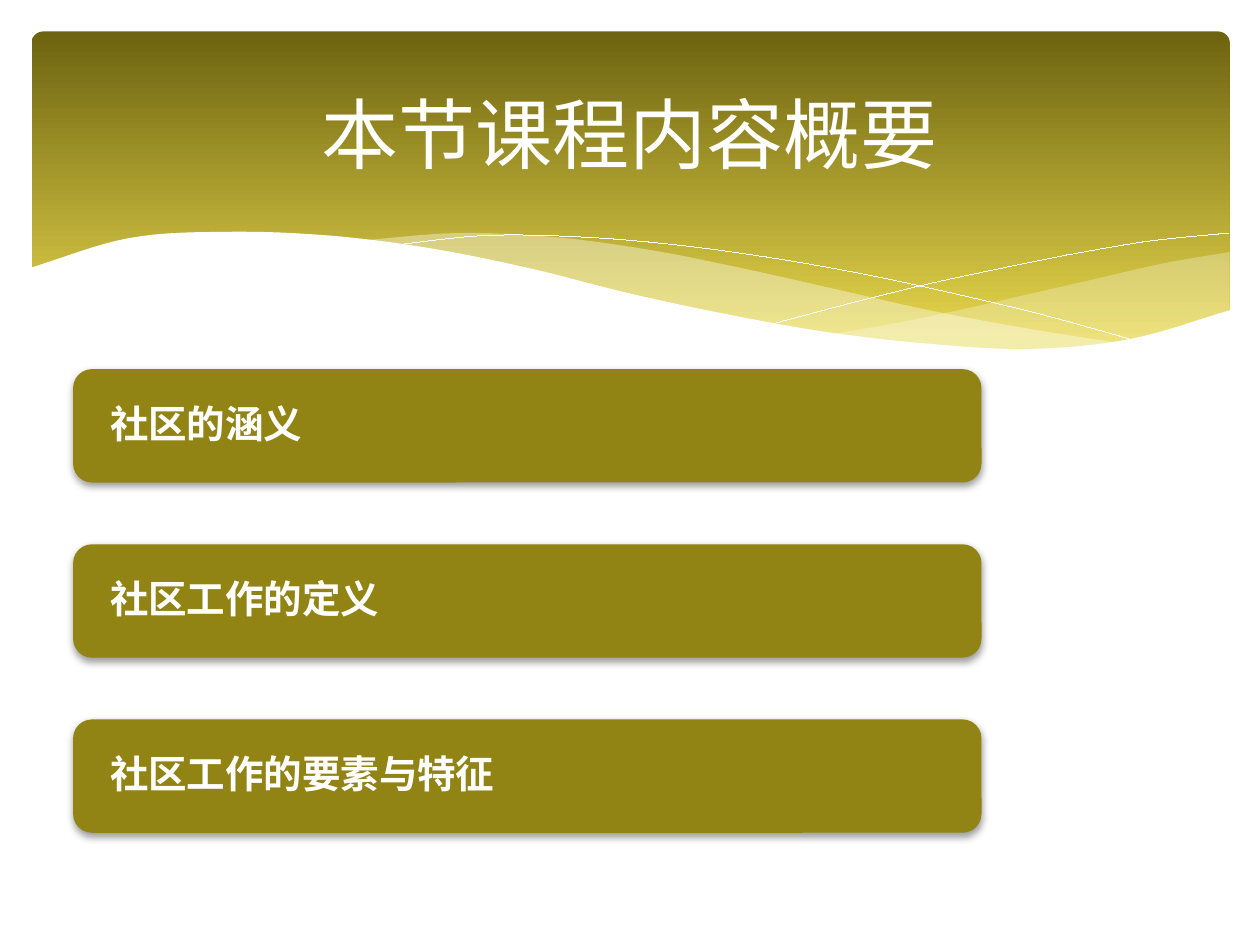
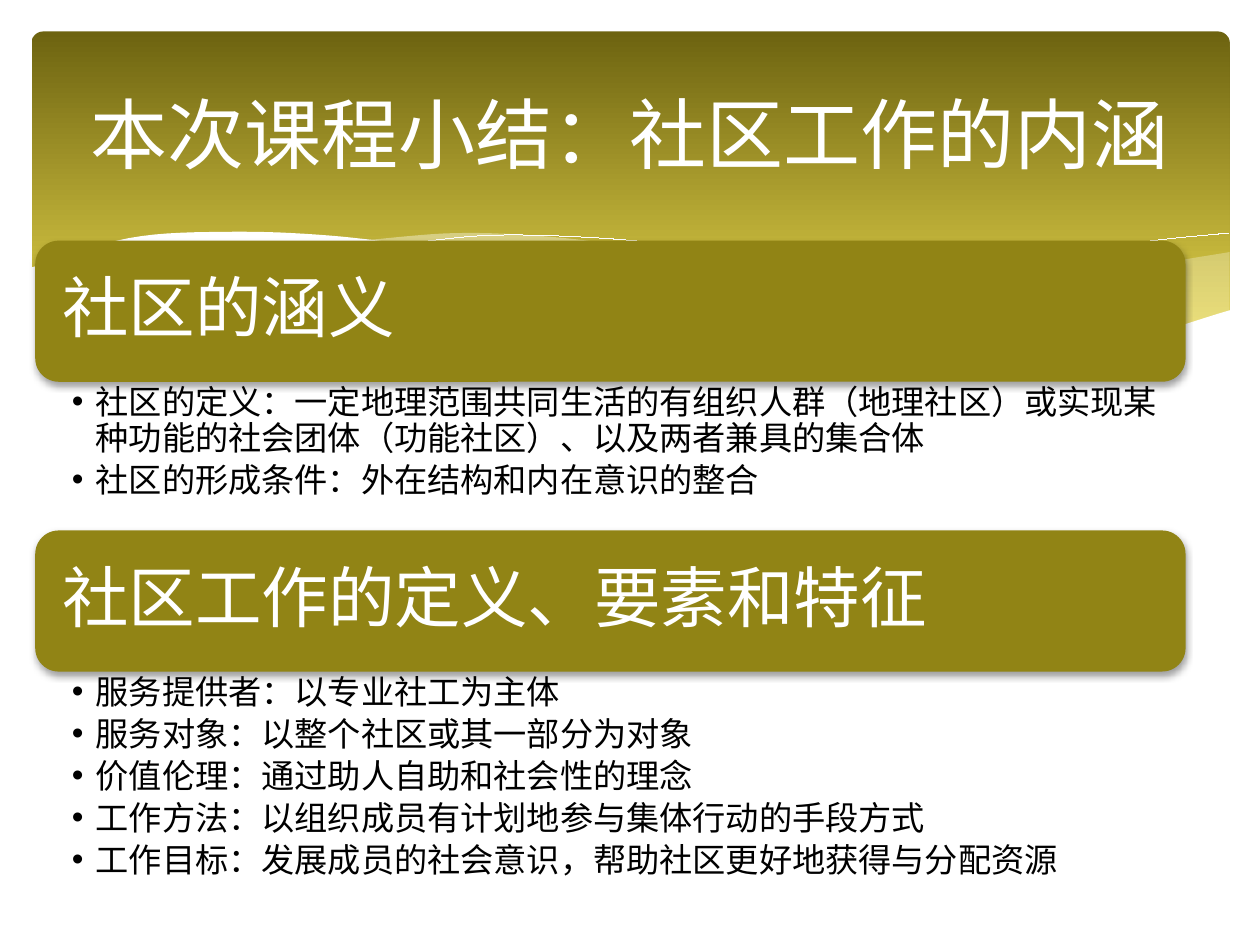
from lxml.etree import SubElement
from pptx import Presentation
from pptx.dml.color import RGBColor
from pptx.enum.shapes import MSO_SHAPE as Shape
from pptx.enum.text import MSO_ANCHOR as Anchor, PP_ALIGN as Align
from pptx.oxml.ns import qn
from pptx.util import Inches, Pt

FONT = "Calibri"
WHITE = RGBColor(0xFF, 0xFF, 0xFF)
BLACK = RGBColor(0, 0, 0)
CREAM = RGBColor(0xFF, 0xFF, 0xF4)
OLIVE = RGBColor(0x91, 0x84, 0x15)
DARK = RGBColor(0x6D, 0x63, 0x10)
GOLD = RGBColor(0xE5, 0xD5, 0x4B)

OUTLINE = "本节课程内容概要"
TOPICS = ["社区的涵义", "社区工作的定义", "社区工作的要素与特征"]

SUMMARY = "本次课程小结：社区工作的内涵"
PARTS = [
    ("社区的涵义", 1.18, [
        "社区的定义：一定地理范围共同生活的有组织人群（地理社区）或实现某种功能的社会团体（功能社区）、以及两者兼具的集合体",
        "社区的形成条件：外在结构和内在意识的整合",
    ]),
    ("社区工作的定义、要素和特征", 2.11, [
        "服务提供者：以专业社工为主体",
        "服务对象：以整个社区或其一部分为对象",
        "价值伦理：通过助人自助和社会性的理念",
        "工作方法：以组织成员有计划地参与集体行动的手段方式",
        "工作目标：发展成员的社会意识，帮助社区更好地获得与分配资源",
    ]),
]

TITLE_BOX = (0.5, 0.37, 9, 1.37)
BAND_BOX = (0.25, 0.25, 9.51, 2.7)
TOPIC_BOX = (0.58, 2.93, 7.21, 0.9)
TOPIC_STEP = 1.39
HEAD_BOX = (0.28, 1.91, 9.13, 1.12)
INDENT = 0.19
STEPS = 8

# Each wave: first x, last x, heights at equal steps between them.
RIGHT = (6.61, 9.76, [2.65, 2.56, 2.45, 2.33, 2.21, 2.09, 2])
MIDDLE = (2.86, 8.93, [1.91, 1.85, 1.88, 1.98, 2.13, 2.3, 2.47, 2.61, 2.73])
FALL = (3.09, 9.07, [1.95, 1.87, 1.88, 1.94, 2.04, 2.17, 2.33, 2.51, 2.72])
RISE = (6.13, 9.75, [2.57, 2.41, 2.26, 2.13, 2.01, 1.91, 1.85])
FRONT = (0.23, 9.77, [2.13, 1.89, 1.84, 1.87, 1.97, 2.13, 2.33,
                      2.5, 2.64, 2.73, 2.77, 2.69, 2.46])

# Each fill: wave, floor it closes down to, colour, opacity in percent.
FILLS = [(RIGHT, 2.78, CREAM, 29), (MIDDLE, 2.78, CREAM, 40)]
LINES = [FALL, RISE]
COVER = (FRONT, 3.29, WHITE, 100)


def blend(a, b, c, d, t):
    return b + t * (c - a + t * (2 * a - 5 * b + 4 * c - d
                                 + t * (3 * (b - c) + d - a))) / 2


def trace(wave):
    first, last, ys = wave
    count = len(ys) - 1
    ends = [2 * ys[0] - ys[1], *ys, 2 * ys[-1] - ys[-2]]
    points = []
    for i in range(count):
        for j in range(STEPS):
            t = j / STEPS
            x = first + (last - first) * (i + t) / count
            points.append((x, blend(*ends[i:i + 4], t)))
    return points + [(last, ys[-1])]


def draw_path(slide, points, close):
    start, *rest = [(Inches(x), Inches(y)) for x, y in points]
    path = slide.shapes.build_freeform(*start)
    path.add_line_segments(rest, close=close)
    shape = path.convert_to_shape()
    shape.shadow.inherit = False
    return shape


def add_line(slide, wave):
    shape = draw_path(slide, trace(wave), False)
    shape.fill.background()
    shape.line.color.rgb = WHITE
    shape.element.xpath("./p:spPr/a:ln")[0].set("w", "0")
    return shape


def add_fill(slide, wave, floor, color, alpha):
    first, last, _ = wave
    base = [(last, floor), (first, floor)]
    shape = draw_path(slide, trace(wave) + base, True)
    paint(shape, color)
    if alpha < 100:
        tint = shape.element.xpath("./p:spPr/a:solidFill/a:srgbClr")[0]
        SubElement(tint, qn("a:alpha"), val=str(alpha * 1000))
    return shape


def paint(shape, color):
    shape.fill.solid()
    shape.fill.fore_color.rgb = color
    shape.line.fill.background()


def add_round(slide, box):
    shape = slide.shapes.add_shape(Shape.ROUNDED_RECTANGLE, *map(Inches, box))
    shape.shadow.inherit = False
    return shape


def add_band(slide):
    band = add_round(slide, BAND_BOX)
    band.adjustments[0] = 0.034
    band.line.fill.background()
    band.fill.gradient()
    band.fill.gradient_angle = 270
    for stop, color, place in zip(band.fill.gradient_stops, (DARK, GOLD), (0, 0.9)):
        stop.color.rgb = color
        stop.position = place
    return band


def dress_layout(layout, slide):
    parts = [add_band(slide)]
    parts += [add_fill(slide, *fill) for fill in FILLS]
    parts += [add_line(slide, wave) for wave in LINES]
    parts.append(add_fill(slide, *COVER))
    for i, part in enumerate(parts):
        part.element.xpath(".//p:cNvPr")[0].set("id", str(100 + i))
        layout.shapes.element.insert(2 + i, part.element)


def set_font(par, size, color, bold=False):
    font = par.font
    font.name, font.size, font.bold = FONT, Pt(size), bold
    font.color.rgb = color


def set_title(slide, text):
    title = slide.shapes.title
    title.left, title.top, title.width, title.height = map(Inches, TITLE_BOX)
    frame = title.text_frame
    frame.text = text
    frame.vertical_anchor = Anchor.MIDDLE
    par = frame.paragraphs[0]
    par.alignment = Align.CENTER
    set_font(par, 44, WHITE)


def set_inset(frame, left, top, right, bottom):
    frame.word_wrap = True
    frame.margin_left, frame.margin_top = Inches(left), Inches(top)
    frame.margin_right, frame.margin_bottom = Inches(right), Inches(bottom)


def add_shadow(shape):
    effect = shape.element.xpath("./p:spPr/a:effectLst")[0]
    shadow = SubElement(effect, qn("a:outerShdw"), blurRad=str(Pt(4)),
                        dist=str(Pt(2)), dir="5400000", rotWithShape="0")
    tone = SubElement(shadow, qn("a:srgbClr"), val=str(BLACK))
    SubElement(tone, qn("a:alpha"), val="38000")


def add_card(slide, text, box, inset, size, bold=False):
    card = add_round(slide, box)
    paint(card, OLIVE)
    add_shadow(card)
    frame = card.text_frame
    frame.text = text
    frame.vertical_anchor = Anchor.MIDDLE
    set_inset(frame, *inset)
    par = frame.paragraphs[0]
    par.alignment = Align.LEFT
    par.line_spacing = 0.9
    set_font(par, size, WHITE, bold)


def add_bullet(par):
    props = par._p.get_or_add_pPr()
    props.set("marL", str(Inches(INDENT)))
    props.set("indent", str(Inches(-INDENT)))
    SubElement(props, qn("a:buFont"), typeface="Arial")
    SubElement(props, qn("a:buChar"), char="•")


def add_list(slide, items, box):
    frame = slide.shapes.add_textbox(*map(Inches, box)).text_frame
    set_inset(frame, 0.29, 0.03, 0.15, 0.03)
    frame.text = "\n".join(items)
    for par in frame.paragraphs:
        par.level = 1
        par.line_spacing = 0.9
        par.space_after = Pt(3.5)
        add_bullet(par)
        set_font(par, 19, BLACK)


def fill_outline(slide):
    set_title(slide, OUTLINE)
    left, top, width, tall = TOPIC_BOX
    for i, topic in enumerate(TOPICS):
        box = (left, top + TOPIC_STEP * i, width, tall)
        add_card(slide, topic, box, (0.25, 0, 0.25, 0), 22, True)


def fill_summary(slide):
    set_title(slide, SUMMARY)
    left, top, width, tall = HEAD_BOX
    for head, depth, items in PARTS:
        add_card(slide, head, (left, top, width, tall), [0.16] * 4, 38)
        add_list(slide, items, (left, top + tall, width, depth))
        top += tall + depth


def main():
    deck = Presentation()
    deck.slide_width, deck.slide_height = Inches(10), Inches(7.5)
    layout = deck.slide_layouts[5]
    first, second = [deck.slides.add_slide(layout) for _ in range(2)]
    dress_layout(layout, first)
    fill_outline(first)
    fill_summary(second)
    deck.save("out.pptx")


if __name__ == "__main__":
    main()
